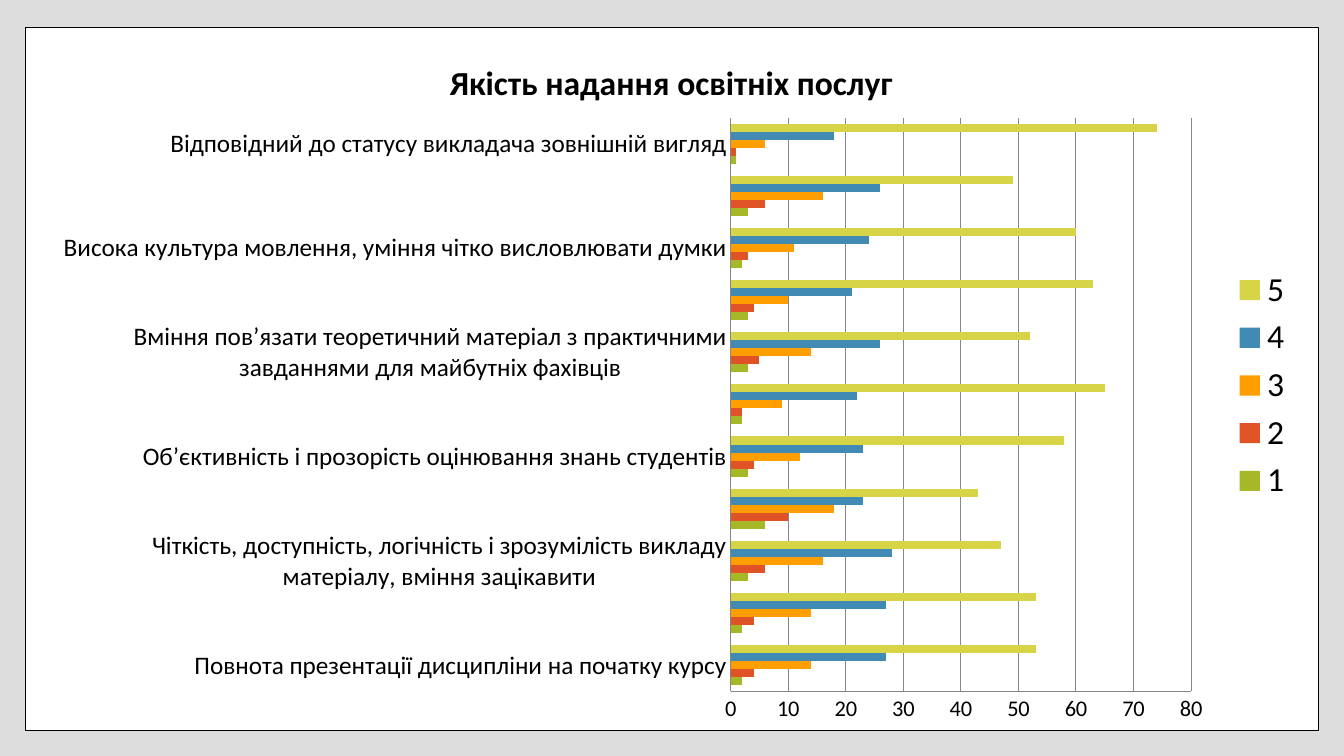
from dataclasses import dataclass

from lxml import etree
from pptx import Presentation
from pptx.chart.axis import CategoryAxis, ValueAxis
from pptx.chart.chart import Chart
from pptx.chart.data import CategoryChartData
from pptx.dml.color import RGBColor
from pptx.dml.fill import FillFormat
from pptx.dml.line import LineFormat
from pptx.enum.chart import XL_CHART_TYPE, XL_LEGEND_POSITION, XL_TICK_MARK
from pptx.enum.shapes import MSO_SHAPE
from pptx.oxml.ns import qn
from pptx.slide import Slide
from pptx.text.text import Font
from pptx.util import Inches, Pt

BAR = XL_CHART_TYPE.BAR_CLUSTERED
RIGHT = XL_LEGEND_POSITION.RIGHT
NO_TICK = XL_TICK_MARK.NONE
RECTANGLE = MSO_SHAPE.RECTANGLE
SLIDE_W, SLIDE_H = Inches(13.33), Inches(7.5)


@dataclass(frozen=True)
class Theme:
    font: str = "Calibri"
    background: str = "DDDDDD"
    panel: str = "FFFFFF"
    ink: str = "000000"
    grid: str = "868686"
    title_size: int = 24
    legend_size: int = 24
    category_size: int = 18
    value_size: int = 16
    base_size: int = 10


@dataclass(frozen=True)
class Share:
    x: float
    y: float
    w: float
    h: float

    def on_slide(self) -> tuple[int, int, int, int]:
        return (round(self.x * SLIDE_W), round(self.y * SLIDE_H),
                round(self.w * SLIDE_W), round(self.h * SLIDE_H))


@dataclass(frozen=True)
class Grade:
    name: str
    color: str
    values: tuple[int, ...]


THEME = Theme()
PANEL = Share(0.019, 0.036, 0.962, 0.93)
CHART = Share(0.029, 0.045, 0.941, 0.93)
PLOT = Share(0.547, 0.119, 0.364, 0.816)
TITLE = "Якість надання освітніх послуг"
CRITERIA = (
    "Повнота презентації дисципліни на початку курсу",
    "Чіткість, доступність, логічність і зрозумілість викладу матеріалу, вміння зацікавити",
    "Об’єктивність і прозорість оцінювання знань студентів",
    "Вміння пов’язати теоретичний матеріал з практичними завданнями для майбутніх фахівців",
    "Висока культура мовлення, уміння чітко висловлювати думки",
    "Відповідний до статусу викладача зовнішній вигляд",
)
GRADES = (
    Grade("1", "A6B727", (2, 2, 3, 6, 3, 2, 3, 3, 2, 3, 1)),
    Grade("2", "DF5327", (4, 4, 6, 10, 4, 2, 5, 4, 3, 6, 1)),
    Grade("3", "FE9E00", (14, 14, 16, 18, 12, 9, 14, 10, 11, 16, 6)),
    Grade("4", "418AB3", (27, 27, 28, 23, 23, 22, 26, 21, 24, 26, 18)),
    Grade("5", "D7D447", (53, 53, 47, 43, 58, 65, 52, 63, 60, 49, 74)),
)


def paint(fill: FillFormat, color: str) -> None:
    fill.solid()
    fill.fore_color.rgb = RGBColor.from_string(color)


def stroke(line: LineFormat, color: str, width: float) -> None:
    paint(line.fill, color)
    line.width = Pt(width)


def style_font(font: Font, size: int, bold: bool = False) -> None:
    font.name = THEME.font
    font.size = Pt(size)
    font.bold = bold
    font.color.rgb = RGBColor.from_string(THEME.ink)


def style_axis(axis: CategoryAxis | ValueAxis, size: int) -> None:
    axis.major_tick_mark = NO_TICK
    axis.minor_tick_mark = NO_TICK
    style_font(axis.tick_labels.font, size)
    stroke(axis.format.line, THEME.grid, 0.75)


def place_plot(chart: Chart, share: Share) -> None:
    plot_area = chart.element.find(f"{qn('c:chart')}/{qn('c:plotArea')}")
    for old in plot_area.findall(qn("c:layout")):
        plot_area.remove(old)
    layout = etree.Element(qn("c:layout"))
    manual = etree.SubElement(layout, qn("c:manualLayout"))
    settings = {"layoutTarget": "inner", "xMode": "edge", "yMode": "edge",
                "x": share.x, "y": share.y, "w": share.w, "h": share.h}
    for tag, value in settings.items():
        etree.SubElement(manual, qn(f"c:{tag}")).set("val", str(value))
    plot_area.insert(0, layout)


def every_second_label(labels: tuple[str, ...], count: int) -> list[str]:
    return [labels[i // 2] if i % 2 == 0 else "" for i in range(count)]


def add_panel(s: Slide) -> None:
    sp = s.shapes.add_shape(RECTANGLE, *PANEL.on_slide())
    sp.shadow.inherit = False
    paint(sp.fill, THEME.panel)
    stroke(sp.line, THEME.ink, 1)


def add_title(chart: Chart) -> None:
    chart.has_title = True
    chart.chart_title.include_in_layout = False
    p = chart.chart_title.text_frame.paragraphs[0]
    r = p.add_run()
    r.text = TITLE
    style_font(r.font, THEME.title_size, bold=True)


def add_grades_chart(s: Slide) -> None:
    data = CategoryChartData()
    data.categories = every_second_label(CRITERIA, len(GRADES[0].values))
    for grade in GRADES:
        data.add_series(grade.name, grade.values)
    chart = s.shapes.add_chart(BAR, *CHART.on_slide(), data).chart
    style_font(chart.font, THEME.base_size)
    add_title(chart)

    plot = chart.plots[0]
    plot.gap_width = 150
    plot.vary_by_categories = False
    for series, grade in zip(plot.series, GRADES):
        paint(series.format.fill, grade.color)

    style_axis(chart.category_axis, THEME.category_size)
    values = chart.value_axis
    style_axis(values, THEME.value_size)
    values.minimum_scale, values.maximum_scale, values.major_unit = 0, 80, 10
    values.has_major_gridlines = True
    stroke(values.major_gridlines.format.line, THEME.grid, 0.75)

    chart.has_legend = True
    chart.legend.position = RIGHT
    chart.legend.include_in_layout = False
    style_font(chart.legend.font, THEME.legend_size)
    place_plot(chart, PLOT)


def main() -> None:
    prs = Presentation()
    prs.slide_width, prs.slide_height = SLIDE_W, SLIDE_H
    s = prs.slides.add_slide(prs.slide_layouts[6])
    paint(s.background.fill, THEME.background)
    add_panel(s)
    add_grades_chart(s)
    prs.save("out.pptx")


if __name__ == "__main__":
    main()
